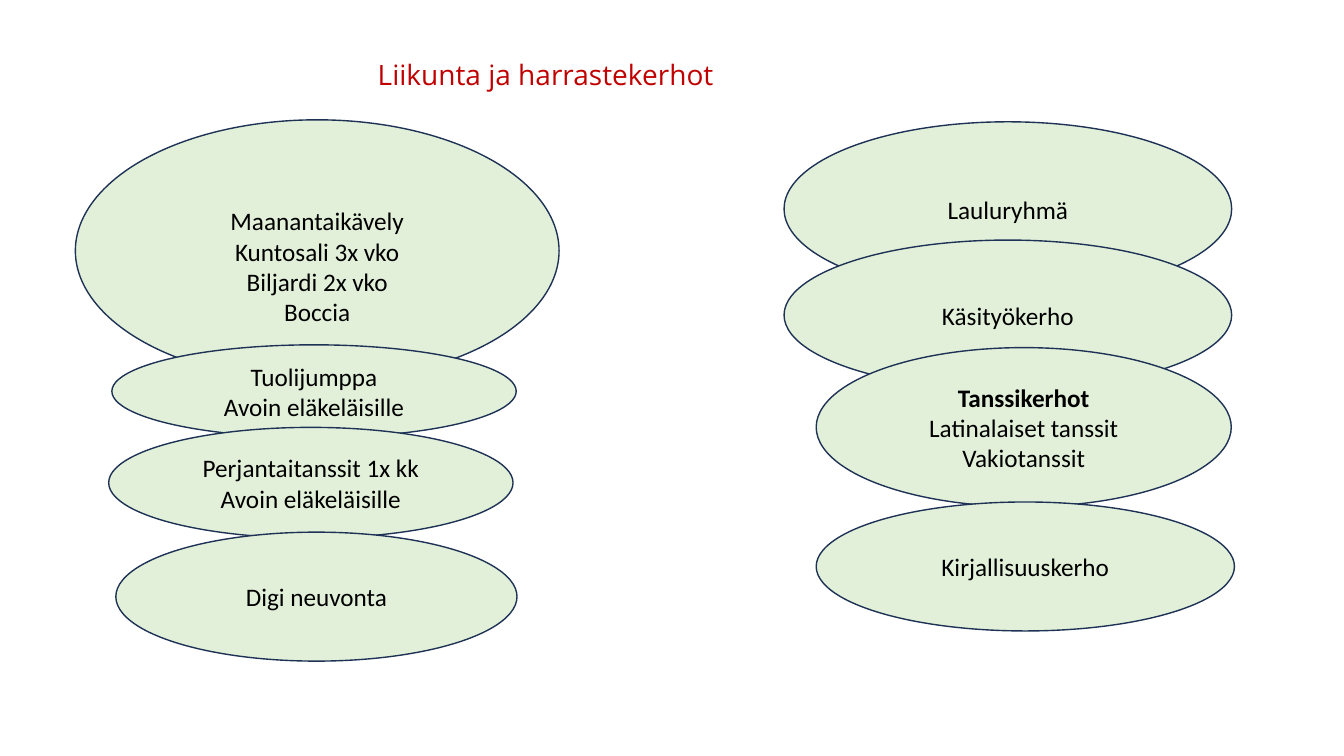
"""Builds a slide of exercise and hobby clubs shown as overlapping ellipses."""
from pptx import Presentation
from pptx.dml.color import RGBColor
from pptx.enum.shapes import MSO_SHAPE
from pptx.enum.text import MSO_ANCHOR, PP_ALIGN
from pptx.util import Cm, Pt

COLORS = {"fill": "E2F0D9", "line": "1E3256", "text": "000000", "title": "C00000"}
HEADING = "Tanssikerhot"
CLUBS = [
    (1.9, 3.02, 12.19, 6.6, 0.9,
     ["Maanantaikävely", "Kuntosali 3x vko", "Biljardi 2x vko", "Boccia"]),
    (2.82, 8.69, 10.19, 2.34, 0.13, ["Tuolijumppa", "Avoin eläkeläisille"]),
    (2.74, 10.77, 10.19, 2.79, 0.13, ["Perjantaitanssit 1x kk", "Avoin eläkeläisille"]),
    (2.92, 13.41, 10.11, 3.25, 0.13, ["Digi neuvonta"]),
    (19.76, 3.07, 11.28, 4.39, 0.13, ["Lauluryhmä"]),
    (19.76, 6.05, 11.28, 3.78, 0.13, ["Käsityökerho"]),
    (20.57, 8.76, 10.46, 4.01, 0.13, [HEADING, "Latinalaiset tanssit", "Vakiotanssit"]),
    (20.57, 12.65, 10.54, 3.25, 0.13, ["Kirjallisuuskerho"]),
]


def rgb(name):
    return RGBColor.from_string(COLORS[name])


def add_run(p, text, font, size, color):
    r = p.add_run()
    r.text = text
    r.font.name = font
    r.font.size = Pt(size)
    r.font.color.rgb = rgb(color)
    return r


prs = Presentation()
prs.slide_width, prs.slide_height = Cm(33.87), Cm(19.05)
s = prs.slides.add_slide(prs.slide_layouts[6])

title = s.shapes.add_textbox(Cm(9.27), Cm(1.32), Cm(13.94), Cm(1.12))
title.text_frame.word_wrap = True
add_run(title.text_frame.paragraphs[0], "Liikunta ja harrastekerhot", "Open Sans", 20, "title")

for left, top, width, height, margin_top, lines in CLUBS:
    sp = s.shapes.add_shape(MSO_SHAPE.OVAL, Cm(left), Cm(top), Cm(width), Cm(height))
    sp.shadow.inherit = False
    sp.fill.solid()
    sp.fill.fore_color.rgb = rgb("fill")
    sp.line.color.rgb = rgb("line")
    sp.line.width = Pt(1)
    tf = sp.text_frame
    tf.word_wrap = True
    tf.vertical_anchor = MSO_ANCHOR.MIDDLE
    tf.margin_top = Cm(margin_top)
    for i, line in enumerate(lines):
        p = tf.add_paragraph() if i else tf.paragraphs[0]
        p.alignment = PP_ALIGN.CENTER
        r = add_run(p, line, "Calibri", 18, "text")
        r.font.bold = line == HEADING

prs.save("out.pptx")
